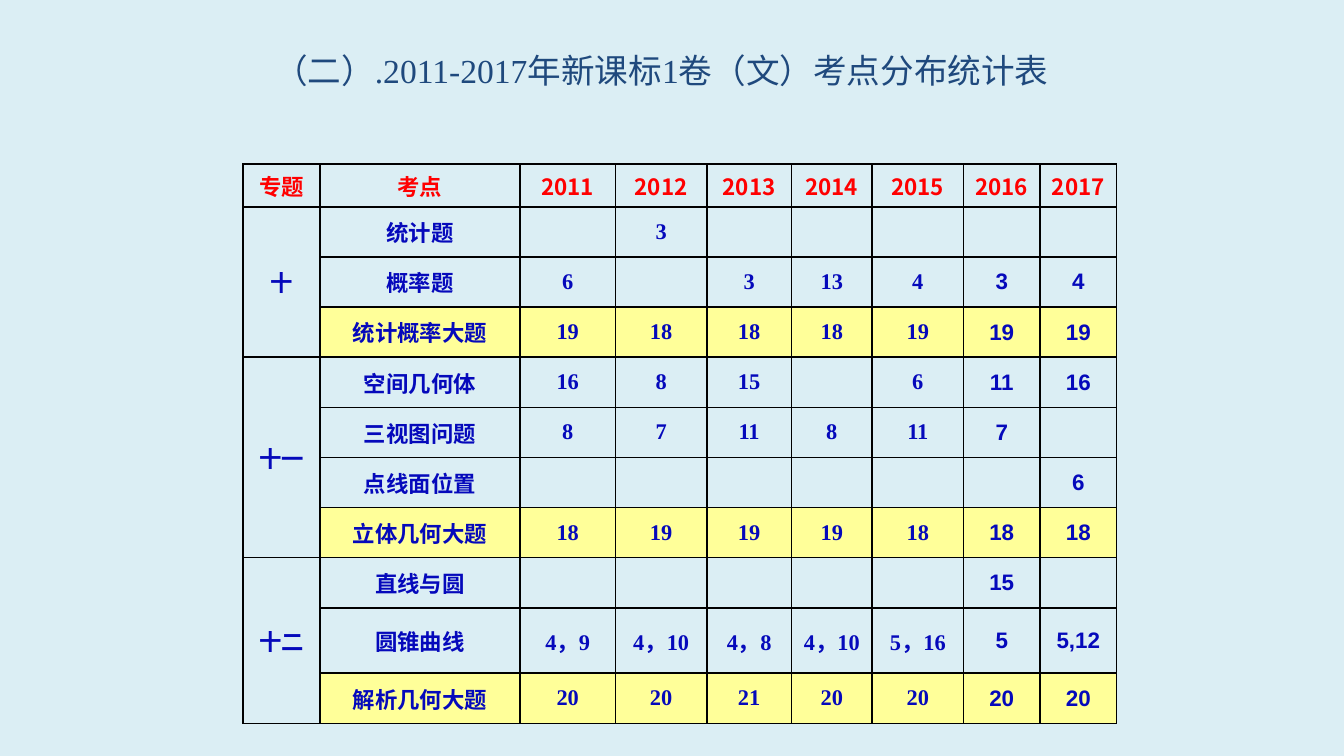
from lxml import etree
from pptx import Presentation
from pptx.dml.color import RGBColor
from pptx.enum.text import MSO_ANCHOR, PP_ALIGN
from pptx.oxml.ns import qn
from pptx.util import Inches, Pt

CENTER = PP_ALIGN.CENTER
MIDDLE = MSO_ANCHOR.MIDDLE

BACKGROUND = RGBColor(0xDB, 0xEE, 0xF4)
TITLE_BLUE = RGBColor(0x1F, 0x49, 0x7D)
HEADER_RED = RGBColor(0xFF, 0x00, 0x00)
BODY_BLUE = RGBColor(0x05, 0x09, 0xBB)
HIGHLIGHT = RGBColor(0xFF, 0xFF, 0x99)
BORDER = RGBColor(0x00, 0x00, 0x00)

CHINESE_FONT = "Noto Sans CJK SC"
SERIF_FONT = "Times New Roman"
SANS_FONT = "Arial"
FIRST_SANS_COLUMN = 7

TITLE = "（二）.2011-2017年新课标1卷（文）考点分布统计表"
HEADER = ["专题", "考点"] + [str(year) for year in range(2011, 2018)]
TOPICS = [
    ("十", [
        ("统计题", ["", "3", "", "", "", "", ""]),
        ("概率题", ["6", "", "3", "13", "4", "3", "4"]),
        ("统计概率大题", ["19", "18", "18", "18", "19", "19", "19"]),
    ]),
    ("十一", [
        ("空间几何体", ["16", "8", "15", "", "6", "11", "16"]),
        ("三视图问题", ["8", "7", "11", "8", "11", "7", ""]),
        ("点线面位置", ["", "", "", "", "", "", "6"]),
        ("立体几何大题", ["18", "19", "19", "19", "18", "18", "18"]),
    ]),
    ("十二", [
        ("直线与圆", ["", "", "", "", "", "15", ""]),
        ("圆锥曲线", ["4，9", "4，10", "4，8", "4，10", "5，16", "5", "5,12"]),
        ("解析几何大题", ["20", "20", "21", "20", "20", "20", "20"]),
    ]),
]
COLUMN_WIDTHS = [0.57, 1.49, 0.71, 0.68, 0.63, 0.6, 0.68, 0.57, 0.57]
TABLE_HEIGHT = 4.05
HEADER_HEIGHT = 0.32


def add_run(paragraph, text, size, font, color, bold=False):
    run = paragraph.add_run()
    run.text = text
    run.font.size = Pt(size)
    run.font.name = font
    run.font.bold = bold
    run.font.color.rgb = color
    east_asian = etree.SubElement(run.font._element, qn("a:ea"))
    east_asian.set("typeface", CHINESE_FONT)


def add_title(slide):
    shape = slide.shapes.add_textbox(Inches(1.81), Inches(0.19), Inches(6.38), Inches(0.66))
    frame = shape.text_frame
    frame.word_wrap = True
    frame.vertical_anchor = MIDDLE
    frame.margin_left = 0
    frame.margin_right = Inches(0.16)
    paragraph = frame.paragraphs[0]
    paragraph.alignment = CENTER
    add_run(paragraph, TITLE, 18, SERIF_FONT, TITLE_BLUE)


def add_borders(cell):
    properties = cell._tc.get_or_add_tcPr()
    for side in ("lnL", "lnR", "lnT", "lnB"):
        line = etree.SubElement(properties, qn(f"a:{side}"), w=str(Pt(1)))
        fill = etree.SubElement(line, qn("a:solidFill"))
        etree.SubElement(fill, qn("a:srgbClr"), val=str(BORDER))


def format_cell(cell, fill_color=None):
    add_borders(cell)
    cell.vertical_anchor = MIDDLE
    cell.margin_left = cell.margin_right = Inches(0.06)
    cell.margin_top = cell.margin_bottom = Inches(0.03)
    if fill_color is None:
        cell.fill.background()
    else:
        cell.fill.solid()
        cell.fill.fore_color.rgb = fill_color


def write_cell(cell, text, font, color):
    paragraph = cell.text_frame.paragraphs[0]
    paragraph.alignment = CENTER
    first, comma, second = text.partition("，")
    for part, part_font in ((first, font), (comma, CHINESE_FONT), (second, font)):
        if part:
            add_run(paragraph, part, 12, part_font, color, bold=True)


def fill_row(table, row, label, values):
    fill_color = HIGHLIGHT if label.endswith("大题") else None
    format_cell(table.cell(row, 0))
    for column, text in enumerate([label] + values, start=1):
        if column == 1:
            font = CHINESE_FONT
        else:
            font = SANS_FONT if column >= FIRST_SANS_COLUMN else SERIF_FONT
        cell = table.cell(row, column)
        format_cell(cell, fill_color)
        write_cell(cell, text, font, BODY_BLUE)


def add_topic_table(slide):
    body_count = sum(len(rows) for _, rows in TOPICS)
    row_height = (TABLE_HEIGHT - HEADER_HEIGHT) / body_count
    table = slide.shapes.add_table(
        body_count + 1, len(HEADER), Inches(1.81), Inches(1.22),
        Inches(sum(COLUMN_WIDTHS)), Inches(TABLE_HEIGHT),
    ).table
    table.first_row = False
    table.horz_banding = False
    for column, width in zip(table.columns, COLUMN_WIDTHS):
        column.width = Inches(width)
    for index, row in enumerate(table.rows):
        row.height = Inches(row_height if index else HEADER_HEIGHT)

    for column, text in enumerate(HEADER):
        cell = table.cell(0, column)
        format_cell(cell)
        write_cell(cell, text, CHINESE_FONT, HEADER_RED)

    start = 1
    for topic, rows in TOPICS:
        for row, (label, values) in enumerate(rows, start):
            fill_row(table, row, label, values)
        topic_cell = table.cell(start, 0)
        topic_cell.merge(table.cell(start + len(rows) - 1, 0))
        write_cell(topic_cell, topic, CHINESE_FONT, BODY_BLUE)
        start += len(rows)


def main():
    presentation = Presentation()
    presentation.slide_width = Inches(10)
    presentation.slide_height = presentation.slide_width * 9 // 16
    slide = presentation.slides.add_slide(presentation.slide_layouts[6])
    slide.background.fill.solid()
    slide.background.fill.fore_color.rgb = BACKGROUND
    add_topic_table(slide)
    add_title(slide)
    presentation.save("out.pptx")


if __name__ == "__main__":
    main()
